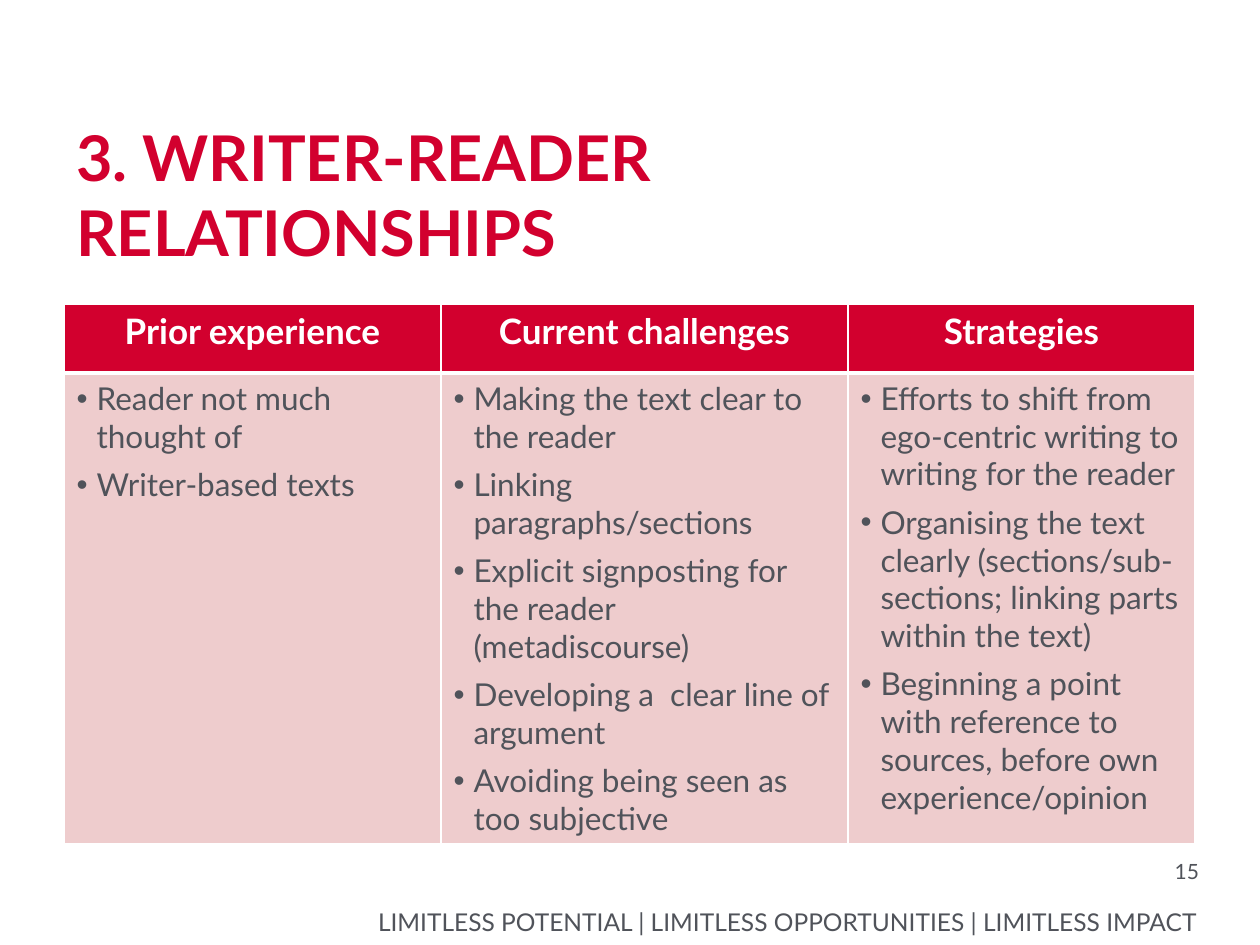
from dataclasses import dataclass

from lxml.etree import SubElement
from pptx import Presentation
from pptx.dml.color import RGBColor as RGB
from pptx.enum.text import MSO_ANCHOR as Anchor, PP_ALIGN as Align
from pptx.oxml.ns import qn
from pptx.util import Pt

EMU_PER_PX = 914400 / 126


@dataclass(frozen=True)
class Theme:
    font: str = "Lato"
    red: str = "D2002E"
    pink: str = "EECCCD"
    grey: str = "50535A"
    white: str = "FFFFFF"
    title: int = 36
    header: int = 20
    body: int = 18
    footer: int = 14
    number: int = 12


THEME = Theme()

COLUMNS = [
    ("Prior experience", 377, [
        "Reader not much thought of",
        "Writer-based texts",
    ]),
    ("Current challenges", 407, [
        "Making the text clear to the reader",
        "Linking paragraphs/sections",
        "Explicit signposting for the reader (metadiscourse)",
        "Developing a  clear line of argument",
        "Avoiding being seen as too subjective",
    ]),
    ("Strategies", 347, [
        "Efforts to shift from ego-centric writing to writing for the reader",
        "Organising the text clearly (sections/sub-sections; linking parts within the text)",
        "Beginning a point with reference to sources, before own experience/opinion",
    ]),
]


def px(length):
    return round(length * EMU_PER_PX)


def add_run(paragraph, text, size, color, bold=False):
    run = paragraph.add_run()
    run.text = text
    run.font.name = THEME.font
    run.font.size = Pt(size)
    run.font.bold = bold
    run.font.color.rgb = RGB.from_string(color)


def add_label(slide, box, text, size, color, bold=False,
              align=Align.LEFT, anchor=Anchor.TOP, padded=False):
    frame = slide.shapes.add_textbox(*map(px, box)).text_frame
    frame.word_wrap = True
    frame.vertical_anchor = anchor
    if not padded:
        frame.margin_left = frame.margin_right = 0
        frame.margin_top = frame.margin_bottom = 0
    paragraph = frame.paragraphs[0]
    paragraph.alignment = align
    add_run(paragraph, text, size, color, bold)


def style_cell(cell, fill, top, bottom):
    """Fill a cell and give it white borders; top and bottom are in points."""
    cell.fill.solid()
    cell.fill.fore_color.rgb = RGB.from_string(fill)
    properties = cell._tc.get_or_add_tcPr()
    edges = [("lnL", 1), ("lnR", 1), ("lnT", top), ("lnB", bottom)]
    for position, (edge, width) in enumerate(edges):
        line = SubElement(properties, qn(f"a:{edge}"), w=str(Pt(width)))
        solid = SubElement(line, qn("a:solidFill"))
        SubElement(solid, qn("a:srgbClr"), val=THEME.white)
        properties.insert(position, line)


def add_bullets(cell, points):
    frame = cell.text_frame
    for index, point in enumerate(points):
        paragraph = frame.add_paragraph() if index else frame.paragraphs[0]
        paragraph.space_after = Pt(6)
        properties = paragraph._p.get_or_add_pPr()
        properties.set("marL", str(px(20)))
        properties.set("indent", str(-px(20)))
        SubElement(properties, qn("a:buFont"), typeface="Arial")
        SubElement(properties, qn("a:buChar"), char="•")
        add_run(paragraph, point, THEME.body, THEME.grey)


def add_comparison(slide, left, top, row_heights):
    width = sum(column_width for _, column_width, _ in COLUMNS)
    table = slide.shapes.add_table(
        2, len(COLUMNS), px(left), px(top), px(width), px(sum(row_heights))).table
    for row, height in zip(table.rows, row_heights):
        row.height = px(height)
    for index, (heading, column_width, points) in enumerate(COLUMNS):
        table.columns[index].width = px(column_width)
        header, body = table.cell(0, index), table.cell(1, index)
        style_cell(header, THEME.red, top=1, bottom=3)
        style_cell(body, THEME.pink, top=3, bottom=1)
        paragraph = header.text_frame.paragraphs[0]
        paragraph.alignment = Align.CENTER
        add_run(paragraph, heading, THEME.header, THEME.white, bold=True)
        add_bullets(body, points)


def main():
    deck = Presentation()
    deck.slide_width, deck.slide_height = px(1260), px(945)
    slide = deck.slides.add_slide(deck.slide_layouts[6])

    # Footer strap line and page number
    add_label(slide, (266, 906, 932, 30),
              "LIMITLESS POTENTIAL | LIMITLESS OPPORTUNITIES | LIMITLESS IMPACT",
              THEME.footer, THEME.grey, align=Align.RIGHT, anchor=Anchor.BOTTOM)
    add_label(slide, (1106, 859, 93, 35), "15",
              THEME.number, THEME.grey, align=Align.RIGHT)

    # Comparison table
    add_comparison(slide, 64, 304, (69, 450))

    # Title
    add_label(slide, (64, 112, 1082, 89), "3. WRITER-READER RELATIONSHIPS",
              THEME.title, THEME.red, bold=True, padded=True)

    deck.save("out.pptx")


if __name__ == "__main__":
    main()
